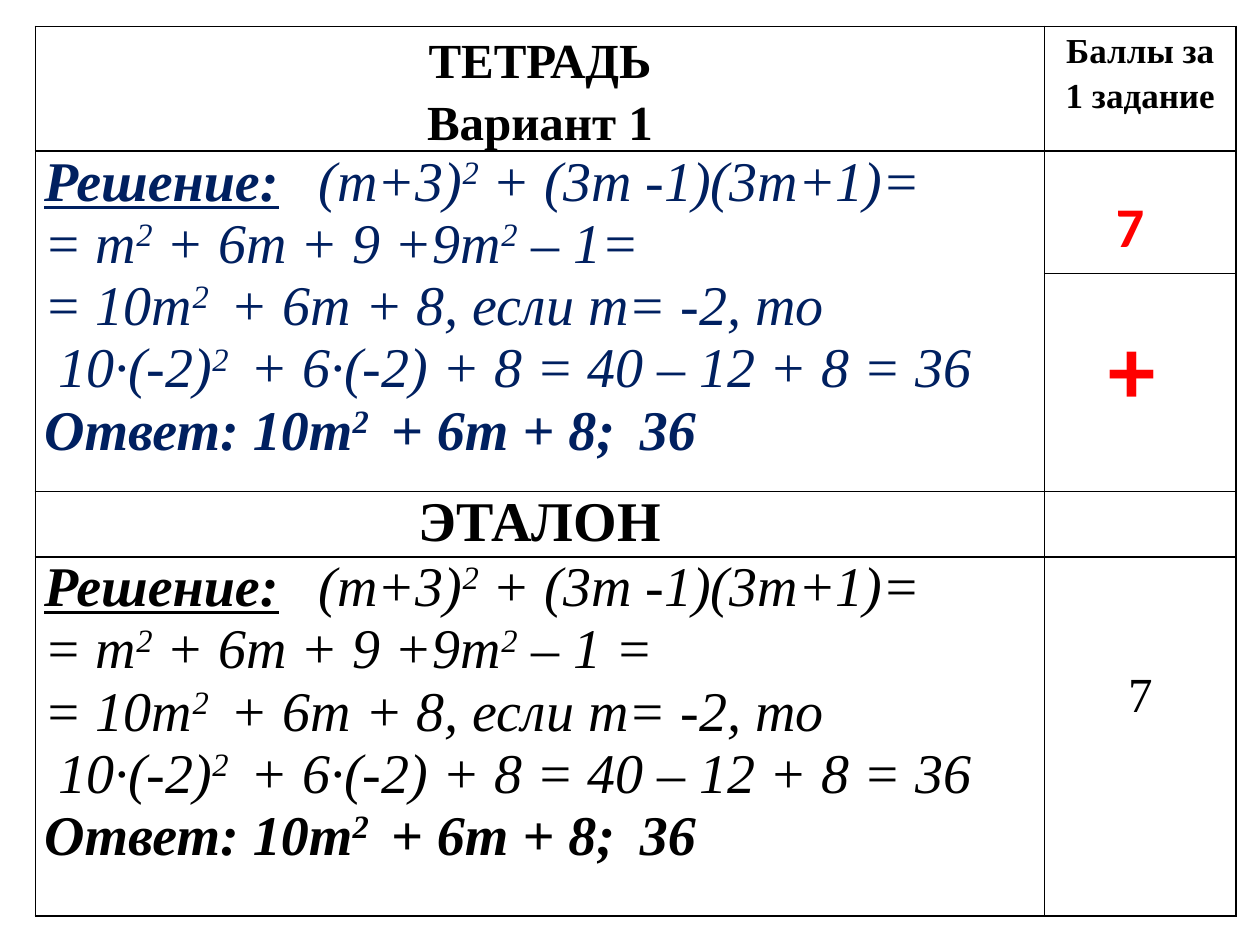
"""Builds a slide that sets a pupil's algebra solution beside the reference one."""
import pptx
import pptx.util
import pptx.dml.color
import pptx.enum.text
import pptx.oxml.ns
import lxml.etree

Pt = pptx.util.Pt
CENTER = pptx.enum.text.PP_ALIGN.CENTER
COLORS = {"ink": "000000", "pupil": "002060", "mark": "FF0000"}
SERIF, SANS = "Times New Roman", "Calibri"

COLUMNS = [576.7, 109.4]
ROWS = [71.3, 69.8, 124.6, 37.4, 205.2]
TABLE_LEFT, TABLE_TOP = 20.2, 15.1
CELL_INSET = 5
TAB_STOPS = [157, 340.5]

HEADINGS = [
    (0, 0, ["ТЕТРАДЬ", "Вариант 1"], 28, 1.15),
    (0, 1, ["Баллы за 1 задание"], 20, 1.15),
    (3, 0, ["ЭТАЛОН"], 32, 1),
]
SOLUTION_LABEL = "Решение:"
SOLUTION_START = "\t(т+3)^2^ + (3т -1)(3т+1)="
SOLUTION_END = [
    "= 10т^2 ^ + 6т + 8, если т= -2, то",
    " 10∙(-2)^2 ^ + 6∙(-2) + 8 = 40 – 12 + 8 = 36",
]
ANSWER = "Ответ: 10т^2 ^ + 6т + 8;\t36"
SOLUTIONS = [
    (1, "pupil", "= т^2^ + 6т + 9 +9т^2^ – 1="),
    (4, "ink", "= т^2^ + 6т + 9 +9т^2^ – 1 ="),
]
REFERENCE_SCORE = (4, 1, "7", 28, 64)
MARKS = [
    ("+", 54, 626.4, 173.5, 51, 73, 7.2),
    ("7", 32, 626.4, 105.8, 40, 46, 11.3),
]


def add_span(para, text, size, color="ink", face=SERIF, bold=False, italic=False, underline=False):
    span = para.add_run()
    span.text = text
    font = span.font
    font.name, font.size = face, Pt(size)
    font.bold, font.italic, font.underline = bold, italic, underline
    font.color.rgb = pptx.dml.color.RGBColor.from_string(COLORS[color])
    return span


def add_formula(para, formula, color, bold=False):
    for index, piece in enumerate(formula.split("^")):
        if piece:
            span = add_span(para, piece, 32, color, bold=bold, italic=True)
            if index % 2:
                span.font._element.set("baseline", "30000")


def add_tab_stops(para):
    tabs = lxml.etree.SubElement(para._p.get_or_add_pPr(), pptx.oxml.ns.qn("a:tabLst"))
    for stop in TAB_STOPS:
        lxml.etree.SubElement(tabs, pptx.oxml.ns.qn("a:tab"), pos=str(Pt(stop)), algn="l")


def new_para(frame, index):
    return frame.add_paragraph() if index else frame.paragraphs[0]


def style_cell(cell):
    cell.margin_left = cell.margin_right = Pt(CELL_INSET)
    cell.margin_top = cell.margin_bottom = Pt(0)
    properties = cell._tc.get_or_add_tcPr()
    for side in ("lnL", "lnR", "lnT", "lnB"):
        line = lxml.etree.SubElement(properties, pptx.oxml.ns.qn("a:" + side), w=str(Pt(1)))
        fill = lxml.etree.SubElement(line, pptx.oxml.ns.qn("a:solidFill"))
        lxml.etree.SubElement(fill, pptx.oxml.ns.qn("a:srgbClr"), val=COLORS["ink"])
    cell.fill.background()


def add_solution(cell, color, expansion):
    formulas = [SOLUTION_START, expansion, *SOLUTION_END, ANSWER]
    for index, formula in enumerate(formulas):
        para = new_para(cell.text_frame, index)
        add_tab_stops(para)
        if formula == SOLUTION_START:
            add_span(para, SOLUTION_LABEL, 32, color, bold=True, italic=True, underline=True)
        add_formula(para, formula, color, bold=formula == ANSWER)


def add_table(slide):
    table = slide.shapes.add_table(
        len(ROWS), len(COLUMNS), Pt(TABLE_LEFT), Pt(TABLE_TOP), Pt(sum(COLUMNS)), Pt(sum(ROWS))
    ).table
    table.first_row = table.horz_banding = False
    for column, width in zip(table.columns, COLUMNS):
        column.width = Pt(width)
    for row, height in zip(table.rows, ROWS):
        row.height = Pt(height)
    for cell in table.iter_cells():
        style_cell(cell)
    table.cell(1, 0).merge(table.cell(2, 0))

    for row, column, lines, size, spacing in HEADINGS:
        for index, text in enumerate(lines):
            para = new_para(table.cell(row, column).text_frame, index)
            para.alignment, para.line_spacing = CENTER, float(spacing)
            add_span(para, text, size, bold=True)
    for row, color, expansion in SOLUTIONS:
        add_solution(table.cell(row, 0), color, expansion)

    row, column, score, size, offset = REFERENCE_SCORE
    cell = table.cell(row, column)
    cell.margin_top = Pt(offset)
    para = cell.text_frame.paragraphs[0]
    para.alignment = CENTER
    add_span(para, score, size)


def add_mark(slide, text, size, left, top, width, height, inset):
    box = slide.shapes.add_textbox(Pt(left), Pt(top), Pt(width), Pt(height))
    box.text_frame.word_wrap = True
    box.text_frame.margin_left = Pt(inset)
    add_span(box.text_frame.paragraphs[0], text, size, "mark", SANS, bold=True)


def main():
    deck = pptx.Presentation()
    deck.slide_width, deck.slide_height = Pt(720), Pt(540)
    slide = deck.slides.add_slide(deck.slide_layouts[6])
    add_table(slide)
    for mark in MARKS:
        add_mark(slide, *mark)
    deck.save("out.pptx")


if __name__ == "__main__":
    main()
